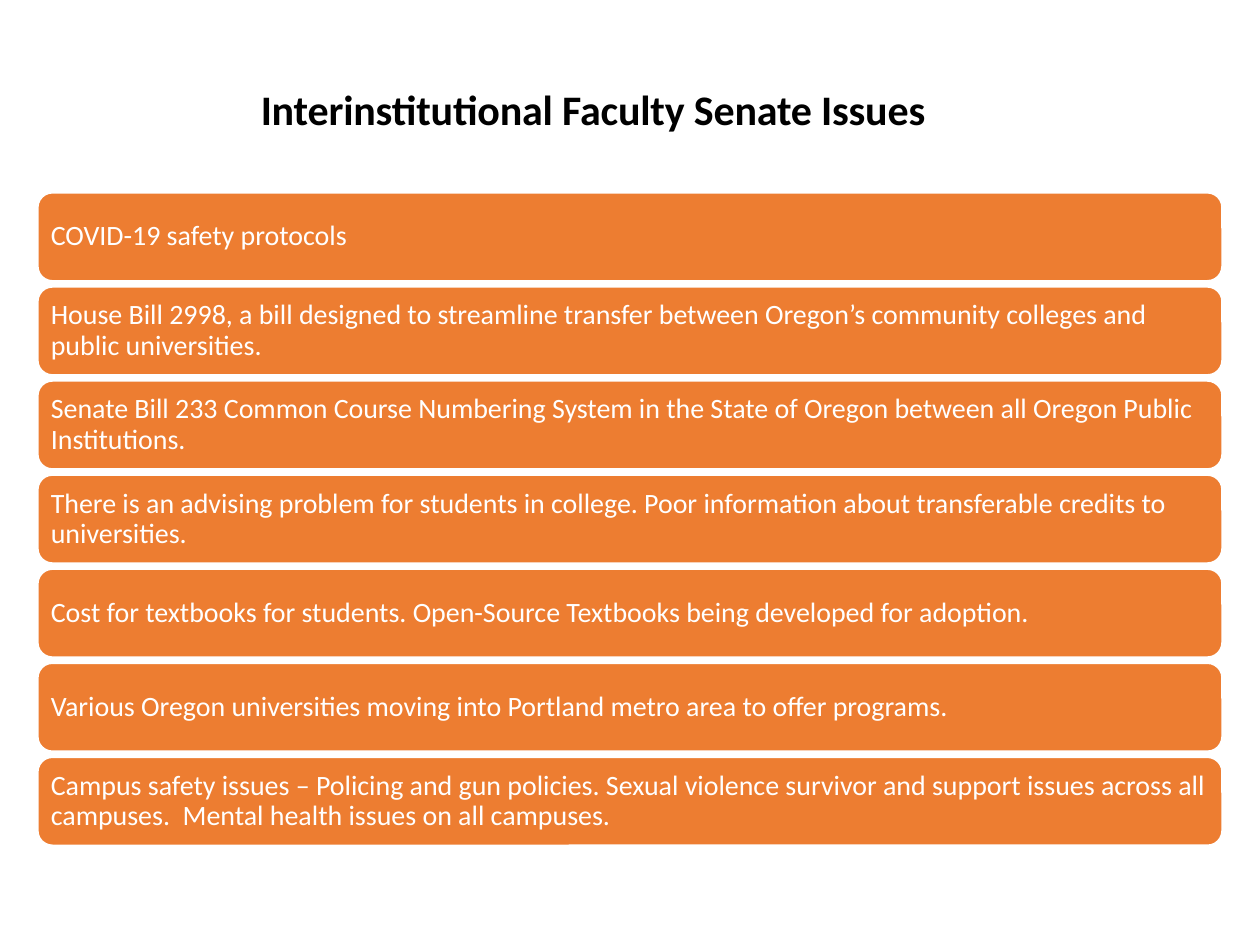
from dataclasses import dataclass

from pptx import Presentation
from pptx.dml.color import RGBColor
from pptx.enum.shapes import MSO_SHAPE as Shape
from pptx.enum.text import MSO_ANCHOR as Anchor, PP_ALIGN as Align
from pptx.slide import Slide
from pptx.text.text import TextFrame
from pptx.util import Inches, Pt

COLORS = {"title": "000000", "bar": "ED7D31", "white": "FFFFFF"}

# Bars share one size and are spread evenly from the first top to the last
BAR_LEFT, BAR_WIDTH, BAR_HEIGHT = 0.3, 9.4, 0.7
FIRST_TOP, LAST_TOP = 1.53, 6.01
BAR_INSET = 0.07

ISSUES = [
    "COVID-19 safety protocols",
    "House Bill 2998, a bill designed to streamline transfer between "
    "Oregon’s community colleges and public universities.",
    "Senate Bill 233 Common Course Numbering System in the State of Oregon "
    "between all Oregon Public Institutions.",
    "There is an advising problem for students in college. Poor information "
    "about transferable credits to universities.",
    "Cost for textbooks for students. Open-Source Textbooks being developed "
    "for adoption.",
    "Various Oregon universities moving into Portland metro area to offer "
    "programs.",
    "Campus safety issues – Policing and gun policies. Sexual violence "
    "survivor and support issues across all campuses.  Mental health issues "
    "on all campuses.",
]


@dataclass
class TextStyle:
    size: float
    color: str
    bold: bool = False
    line_spacing: float = 1.0


TITLE_STYLE = TextStyle(24, "title", bold=True)
ISSUE_STYLE = TextStyle(16, "white", line_spacing=0.9)


def rgb(name: str) -> RGBColor:
    return RGBColor.from_string(COLORS[name])


def set_text(tf: TextFrame, text: str, style: TextStyle,
             margins: tuple[float, float, float, float]) -> None:
    """Write one left-aligned, vertically centred paragraph."""
    frame_format = {"word_wrap": True, "vertical_anchor": Anchor.MIDDLE}
    for side, value in zip(("left", "top", "right", "bottom"), margins):
        frame_format[f"margin_{side}"] = Inches(value)
    for name, value in frame_format.items():
        setattr(tf, name, value)

    p = tf.paragraphs[0]
    p.alignment = Align.LEFT
    p.line_spacing = style.line_spacing
    r = p.add_run()
    r.text = text
    font_format = {"name": "Calibri", "size": Pt(style.size), "bold": style.bold}
    for name, value in font_format.items():
        setattr(r.font, name, value)
    r.font.color.rgb = rgb(style.color)


def add_title(s: Slide, text: str) -> None:
    sp = s.shapes.add_textbox(Inches(1.83), Inches(0.65), Inches(7.33), Inches(0.42))
    set_text(sp.text_frame, text, TITLE_STYLE, (0.24, 0.01, 0, 0))
    # Slightly tightened letters, in hundredths of a point
    sp.text_frame.paragraphs[0].runs[0].font._element.set("spc", "-10")


def add_issue_bar(s: Slide, top: float, text: str) -> None:
    sp = s.shapes.add_shape(Shape.ROUNDED_RECTANGLE, Inches(BAR_LEFT), Inches(top),
                            Inches(BAR_WIDTH), Inches(BAR_HEIGHT))
    sp.shadow.inherit = False
    sp.fill.solid()
    sp.fill.fore_color.rgb = rgb("bar")
    sp.line.color.rgb = rgb("white")
    sp.line.width = Pt(1)
    set_text(sp.text_frame, text, ISSUE_STYLE, (BAR_INSET,) * 4)


def main() -> None:
    prs = Presentation()
    prs.slide_width, prs.slide_height = Inches(10), Inches(7.5)
    s = prs.slides.add_slide(prs.slide_layouts[6])

    # Title
    add_title(s, "Interinstitutional Faculty Senate Issues")

    # Issue list
    pitch = (LAST_TOP - FIRST_TOP) / (len(ISSUES) - 1)
    for i, issue in enumerate(ISSUES):
        add_issue_bar(s, FIRST_TOP + i * pitch, issue)

    prs.save("out.pptx")


if __name__ == "__main__":
    main()
